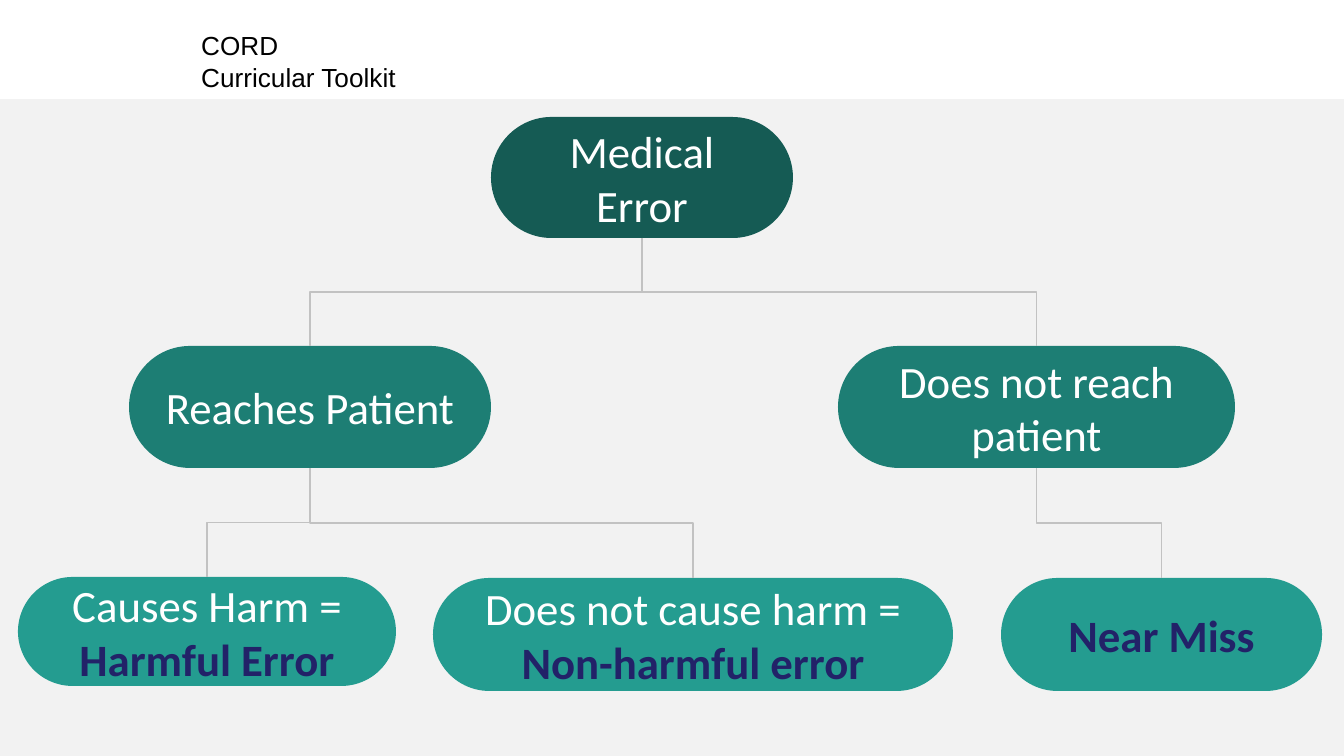
from lxml import etree
from pptx import Presentation
from pptx.dml.color import RGBColor
from pptx.enum.shapes import MSO_CONNECTOR, MSO_SHAPE
from pptx.enum.text import MSO_ANCHOR, PP_ALIGN
from pptx.oxml.ns import qn
from pptx.util import Pt

ELBOW = MSO_CONNECTOR.ELBOW
RECTANGLE, PILL = MSO_SHAPE.RECTANGLE, MSO_SHAPE.ROUNDED_RECTANGLE
CENTER, MIDDLE = PP_ALIGN.CENTER, MSO_ANCHOR.MIDDLE
TOP_SITE, BOTTOM_SITE = 0, 2
PX = 914400 / 134.4
INSET = 14

HEADER = ["CORD", "Curricular Toolkit"]
LEVEL_FILLS = ["155B54", "1D7E74", "249C90"]
PLAIN = {"size": Pt(24), "name": "Calibri", "bold": False}
STRONG = {**PLAIN, "bold": True}
WHITE, NAVY, GREY = "FFFFFF", "222268", "C2C2C2"

# name: (level, parent, (left, top, width, height), plain text, strong text)
NODES = {
    "error": (0, None, (491, 117, 302, 121), "Medical Error", ""),
    "no reach": (1, "error", (838, 346, 397, 122), "Does not reach patient", ""),
    "reach": (1, "error", (129, 346, 362, 122), "Reaches Patient", ""),
    "harm": (2, "reach", (18, 577, 378, 109), "Causes Harm = ", "Harmful Error"),
    "no harm": (2, "reach", (433, 578, 520, 113), "Does not cause harm = ", "Non-harmful error"),
    "near miss": (2, "no reach", (1001, 578, 321, 113), "", "Near Miss"),
}


def emu(px):
    return round(px * PX)


def color(hex_string):
    return RGBColor.from_string(hex_string)


def add_span(para, text, font_format, hex_string):
    span = para.add_run()
    span.text = text
    for key, value in font_format.items():
        setattr(span.font, key, value)
    span.font.color.rgb = color(hex_string)


def add_filled(page, kind, place, fill):
    box = page.shapes.add_shape(kind, *map(emu, place))
    box.shadow.inherit = False
    box.fill.solid()
    box.fill.fore_color.rgb = color(fill)
    box.line.fill.background()
    return box


def add_node(page, level, place, plain, strong):
    box = add_filled(page, PILL, place, LEVEL_FILLS[level])
    box.adjustments[0] = 0.5
    frame = box.text_frame
    frame.word_wrap = True
    frame.vertical_anchor = MIDDLE
    for side in ("left", "top", "right", "bottom"):
        setattr(frame, f"margin_{side}", emu(INSET))
    para = frame.paragraphs[0]
    para.alignment = CENTER
    if plain:
        add_span(para, plain, PLAIN, WHITE)
    if strong:
        add_span(para, strong, STRONG, NAVY)
    return box


def add_branch(page, parent, child):
    """Join parent bottom to child top with an elbow turned to run vertically."""
    start_x, start_y = parent.left + parent.width // 2, parent.top + parent.height
    end_x, end_y = child.left + child.width // 2, child.top
    run, rise = end_y - start_y, abs(end_x - start_x)
    branch = page.shapes.add_connector(ELBOW, start_x, start_y, end_x, end_y)
    branch.begin_connect(parent, BOTTOM_SITE)
    branch.end_connect(child, TOP_SITE)
    # The frame is stored unrotated, around the same centre.
    branch.left = (start_x + end_x - run) // 2
    branch.top = (start_y + end_y - rise) // 2
    branch.width, branch.height = run, rise
    to_right = end_x > start_x
    properties = branch.element.spPr
    transform = properties.find(qn("a:xfrm"))
    transform.set("rot", str((270 if to_right else 90) * 60000))
    transform.set("flipH", "1" if to_right else "0")
    branch.line.color.rgb = color(GREY)
    branch.line.width = Pt(0.75)
    etree.SubElement(properties, qn("a:effectLst"))


def add_header(page):
    add_filled(page, RECTANGLE, (0, 0, 1344, 99), WHITE)
    box = page.shapes.add_textbox(*map(emu, (188, 23, 270, 95)))
    frame = box.text_frame
    frame.word_wrap = False
    for index, text in enumerate(HEADER):
        para = frame.add_paragraph() if index else frame.paragraphs[0]
        add_span(para, text, {"size": Pt(14), "name": "Arial"}, "000000")


def main():
    deck = Presentation()
    deck.slide_width, deck.slide_height = emu(1344), emu(756)
    page = deck.slides.add_slide(deck.slide_layouts[6])
    page.background.fill.solid()
    page.background.fill.fore_color.rgb = color("F2F2F2")
    add_header(page)
    boxes = {
        name: add_node(page, level, place, plain, strong)
        for name, (level, _, place, plain, strong) in NODES.items()
    }
    for name, (_, parent, *_) in NODES.items():
        if parent:
            add_branch(page, boxes[parent], boxes[name])
    deck.save("out.pptx")


if __name__ == "__main__":
    main()
